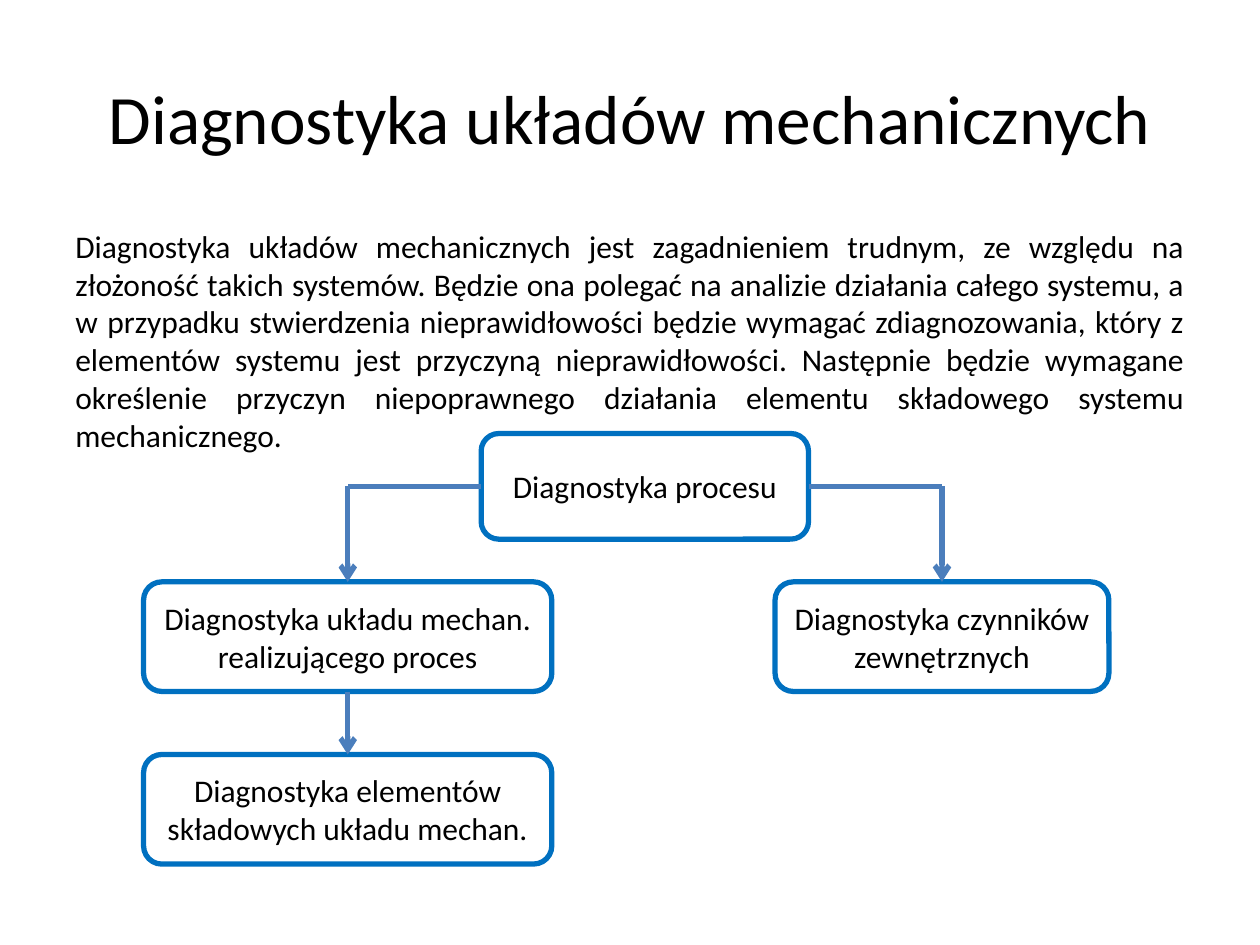
from pptx import Presentation
from pptx import util as u
from pptx.dml import color
from pptx.enum import shapes, text
from pptx.oxml import ns
from lxml import etree

THEME = {
    "font": "Calibri", "title": 39.6, "body": 18, "line": 3,
    "ink": color.RGBColor.from_string("000000"),
    "paper": color.RGBColor.from_string("FFFFFF"),
    "border": color.RGBColor.from_string("0070C0"),
    "arrow": color.RGBColor.from_string("4B7EBC"),
}


def write(s, words, size, align, anchor):
    tf = s.text_frame
    frame = {"word_wrap": True, "vertical_anchor": anchor,
             "auto_size": text.MSO_AUTO_SIZE.NONE}
    for name, value in frame.items():
        setattr(tf, name, value)
    p = tf.paragraphs[0]
    p.alignment = align
    r = p.add_run()
    r.text = words
    font = {"name": THEME["font"], "size": u.Pt(size)}
    for name, value in font.items():
        setattr(r.font, name, value)
    r.font.color.rgb = THEME["ink"]


def connect(x1, y1, x2, y2, arrow):
    c = slide.shapes.add_connector(
        shapes.MSO_CONNECTOR.STRAIGHT, *map(u.Cm, (x1, y1, x2, y2)))
    c.line.color.rgb = THEME["arrow"]
    c.line.width = u.Pt(THEME["line"])
    if arrow:
        etree.SubElement(c.line._get_or_add_ln(), ns.qn("a:tailEnd"), type="arrow")
    etree.SubElement(c._element.spPr, ns.qn("a:effectLst"))


prs = Presentation()
prs.slide_width, prs.slide_height = u.Cm(25.4), u.Cm(19.05)
slide = prs.slides.add_slide(prs.slide_layouts[6])
center, middle = text.PP_ALIGN.CENTER, text.MSO_ANCHOR.MIDDLE

# Title and introduction
s = slide.shapes.add_textbox(*map(u.Cm, (1.27, 0.76, 22.86, 3.18)))
write(s, "Diagnostyka układów mechanicznych", THEME["title"], center, middle)

s = slide.shapes.add_textbox(*map(u.Cm, (1.27, 4.45, 22.86, 12.57)))
write(s, "Diagnostyka układów mechanicznych jest zagadnieniem trudnym, ze względu "
      "na złożoność takich systemów. Będzie ona polegać na analizie działania "
      "całego systemu, a w przypadku stwierdzenia nieprawidłowości będzie wymagać "
      "zdiagnozowania, który z elementów systemu jest przyczyną nieprawidłowości. "
      "Następnie będzie wymagane określenie przyczyn niepoprawnego działania "
      "elementu składowego systemu mechanicznego.",
      THEME["body"], text.PP_ALIGN.JUSTIFY, text.MSO_ANCHOR.TOP)

# Diagram grid: column centres, row tops and box sizes in cm
left_x, process_x, right_x = 7.01, 13, 18.99
process_y, branch_y, parts_y = 8.74, 11.73, 15.21
process_w, process_h = 6.6, 2.13
left_w, right_w, box_h = 8.23, 6.73, 2.21

# Boxes
boxes = [
    (process_x, process_y, process_w, process_h, "Diagnostyka procesu"),
    (right_x, branch_y, right_w, box_h, "Diagnostyka czynników zewnętrznych"),
    (left_x, branch_y, left_w, box_h,
     "Diagnostyka układu mechan. realizującego proces"),
    (left_x, parts_y, left_w, box_h,
     "Diagnostyka elementów składowych układu mechan."),
]
for x, y, w, h, words in boxes:
    s = slide.shapes.add_shape(
        shapes.MSO_SHAPE.ROUNDED_RECTANGLE, *map(u.Cm, (x - w / 2, y, w, h)))
    s.shadow.inherit = False
    s.fill.solid()
    s.fill.fore_color.rgb = THEME["paper"]
    s.line.color.rgb = THEME["border"]
    s.line.width = u.Pt(THEME["line"])
    write(s, words, THEME["body"], center, middle)

# Branches from the process box, then the arrow down to its parts
branch_line_y = process_y + process_h / 2
for x, side in ((left_x, -1), (right_x, 1)):
    connect(process_x + side * process_w / 2, branch_line_y, x, branch_line_y, False)
    connect(x, branch_line_y, x, branch_y, True)
connect(left_x, branch_y + box_h, left_x, parts_y, True)

prs.save("out.pptx")
